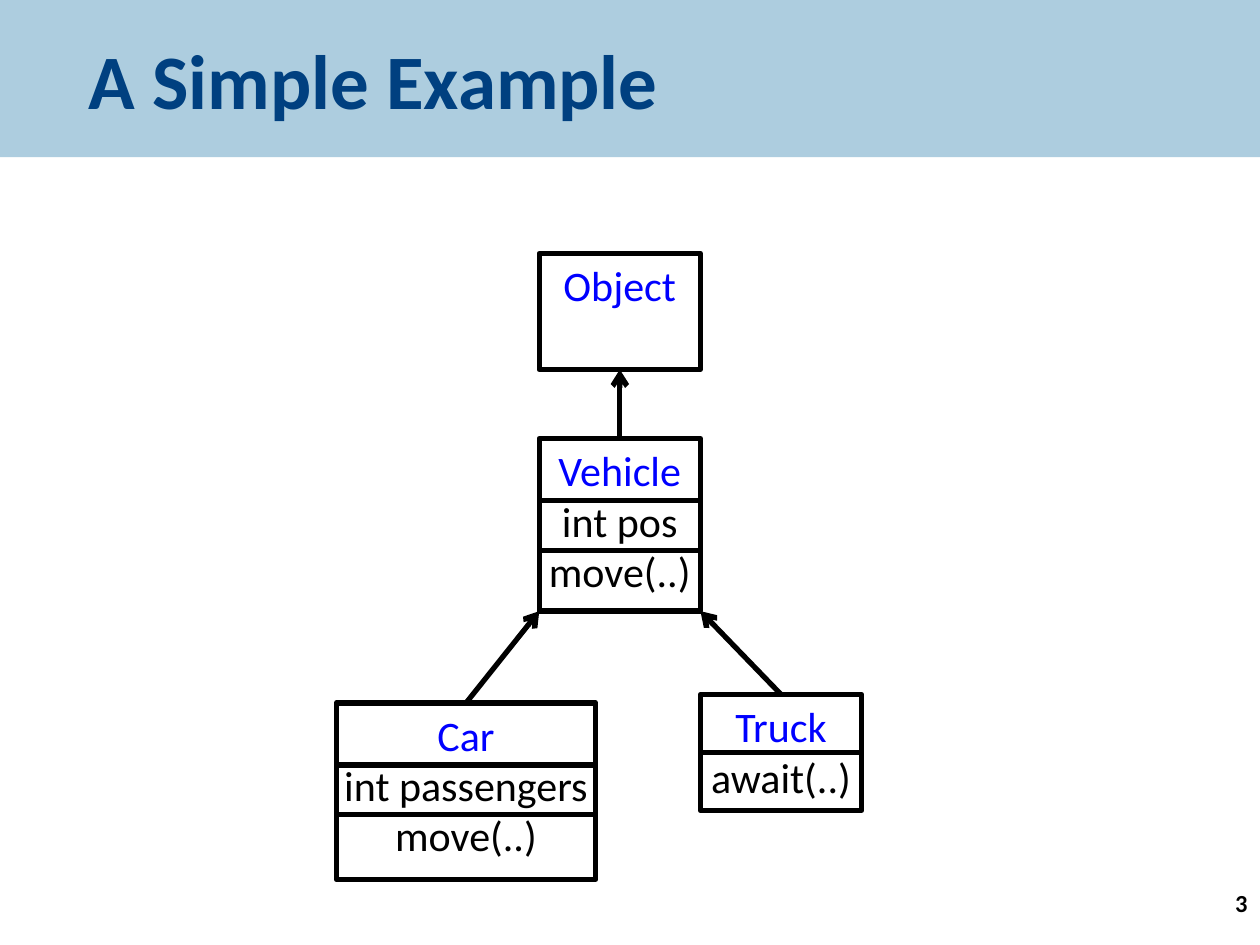
from lxml.etree import SubElement
from pptx import Presentation
from pptx.dml.color import RGBColor
from pptx.enum.shapes import MSO_CONNECTOR, MSO_SHAPE
from pptx.enum.text import MSO_ANCHOR, PP_ALIGN
from pptx.oxml.ns import qn
from pptx.util import Cm, Pt

BAND = RGBColor(0xAD, 0xCD, 0xDF)
NAVY = RGBColor(0x00, 0x40, 0x80)
BLUE = RGBColor(0x00, 0x00, 0xFF)
BLACK = RGBColor(0x00, 0x00, 0x00)
FONT = "Calibri"
LINE_WIDTH = Pt(3)
TOP, LEFT, BOTTOM, RIGHT = range(4)


def style_text(para, size, color, bold=False, align=PP_ALIGN.LEFT):
    para.alignment = align
    para.font.name = FONT
    para.font.size = Pt(size)
    para.font.bold = bold
    para.font.color.rgb = color


def add_title_band(page, left, top, width, height, text):
    band = page.shapes.add_shape(MSO_SHAPE.RECTANGLE, left, top, width, height)
    band.shadow.inherit = False
    band.fill.solid()
    band.fill.fore_color.rgb = BAND
    band.line.fill.background()
    frame = band.text_frame
    frame.margin_left = Cm(1.78)
    frame.vertical_anchor = MSO_ANCHOR.MIDDLE
    frame.text = text
    style_text(frame.paragraphs[0], 44, NAVY, bold=True)


def add_page_number(page, left, top, width, height, number):
    frame = page.shapes.add_textbox(left, top, width, height).text_frame
    frame.word_wrap = True
    frame.text = str(number)
    style_text(frame.paragraphs[0], 14, BLACK, bold=True, align=PP_ALIGN.RIGHT)


def add_line(page, start, end, arrow=False):
    line = page.shapes.add_connector(MSO_CONNECTOR.STRAIGHT, *start, *end)
    line.line.color.rgb = BLACK
    line.line.width = LINE_WIDTH
    if arrow:
        SubElement(line.line._get_or_add_ln(), qn("a:tailEnd"), type="arrow")
    SubElement(line._element.spPr, qn("a:effectLst"))
    return line


def add_class_box(page, left, top, width, height, name, members=(), dividers=()):
    """Draw a class with its members; dividers are distances below the top."""
    box = page.shapes.add_shape(MSO_SHAPE.RECTANGLE, left, top, width, height)
    box.shadow.inherit = False
    box.fill.background()
    box.line.color.rgb = BLACK
    box.line.width = LINE_WIDTH
    frame = box.text_frame
    frame.word_wrap = False
    frame.vertical_anchor = MSO_ANCHOR.TOP
    frame.text = "\n".join((name, *members))
    for index, para in enumerate(frame.paragraphs):
        style_text(para, 24, BLACK if index else BLUE, align=PP_ALIGN.CENTER)
    for offset in dividers:
        y = top + offset
        divider = add_line(page, (left, y), (left + width, y))
        if offset == height // 2:
            divider.begin_connect(box, LEFT)
            divider.end_connect(box, RIGHT)
    return box


def add_inheritance(page, child, parent, end):
    """Point an arrow from the child's top at a place on the parent's bottom."""
    start = (child.left + child.width // 2, child.top)
    arrow = add_line(page, start, end, arrow=True)
    arrow.begin_connect(child, TOP)
    if end[0] == parent.left + parent.width // 2:
        arrow.end_connect(parent, BOTTOM)


def add_class_diagram(page, left, top):
    narrow, short = Cm(3.25), Cm(2.34)
    row_lines = (Cm(1.25), Cm(2.25))
    trunk = left + Cm(4.09)

    root = add_class_box(page, trunk, top, narrow, short, "Object")
    vehicle = add_class_box(page, trunk, top + Cm(3.73), narrow, Cm(3.48),
                            "Vehicle", ("int pos", "move(..)"), row_lines)
    car = add_class_box(page, left, top + Cm(9.06), Cm(5.23), Cm(3.56),
                        "Car", ("int passengers", "move(..)"), row_lines)
    truck = add_class_box(page, trunk + narrow, top + Cm(8.89), narrow, short,
                          "Truck", ("await(..)",), (short // 2,))

    vehicle_bottom = vehicle.top + vehicle.height
    add_inheritance(page, car, vehicle, (vehicle.left, vehicle_bottom))
    add_inheritance(page, truck, vehicle, (vehicle.left + narrow, vehicle_bottom))
    add_inheritance(page, vehicle, root,
                    (root.left + narrow // 2, root.top + root.height))


def main():
    deck = Presentation()
    deck.slide_width, deck.slide_height = Cm(25.4), Cm(19.05)
    page = deck.slides.add_slide(deck.slide_layouts[6])
    add_title_band(page, 0, 0, deck.slide_width, Cm(3.17), "A Simple Example")
    add_page_number(page, Cm(20.12), Cm(17.78), Cm(5.28), Cm(1.27), 3)
    add_class_diagram(page, Cm(6.78), Cm(5.11))
    deck.save("out.pptx")


if __name__ == "__main__":
    main()
